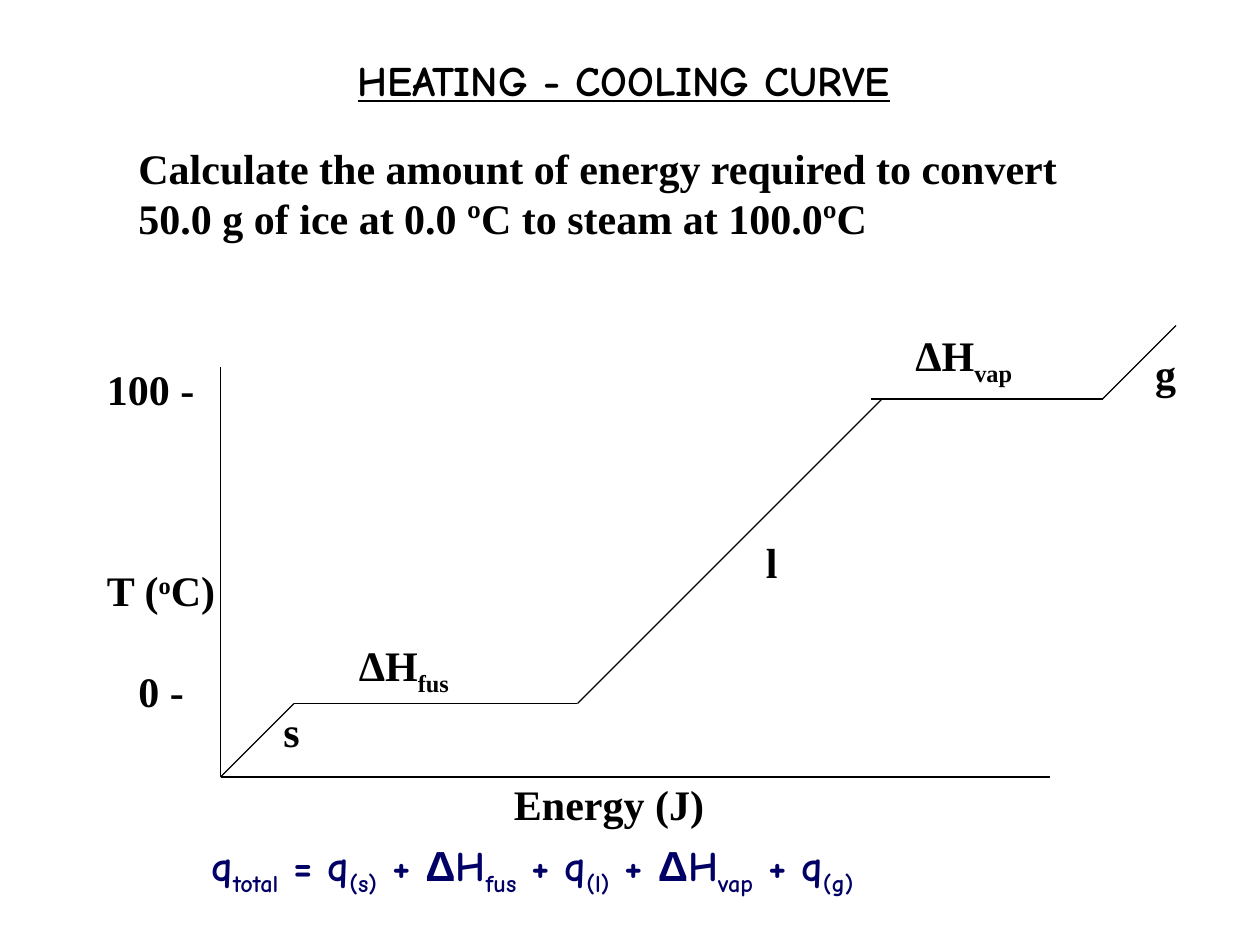
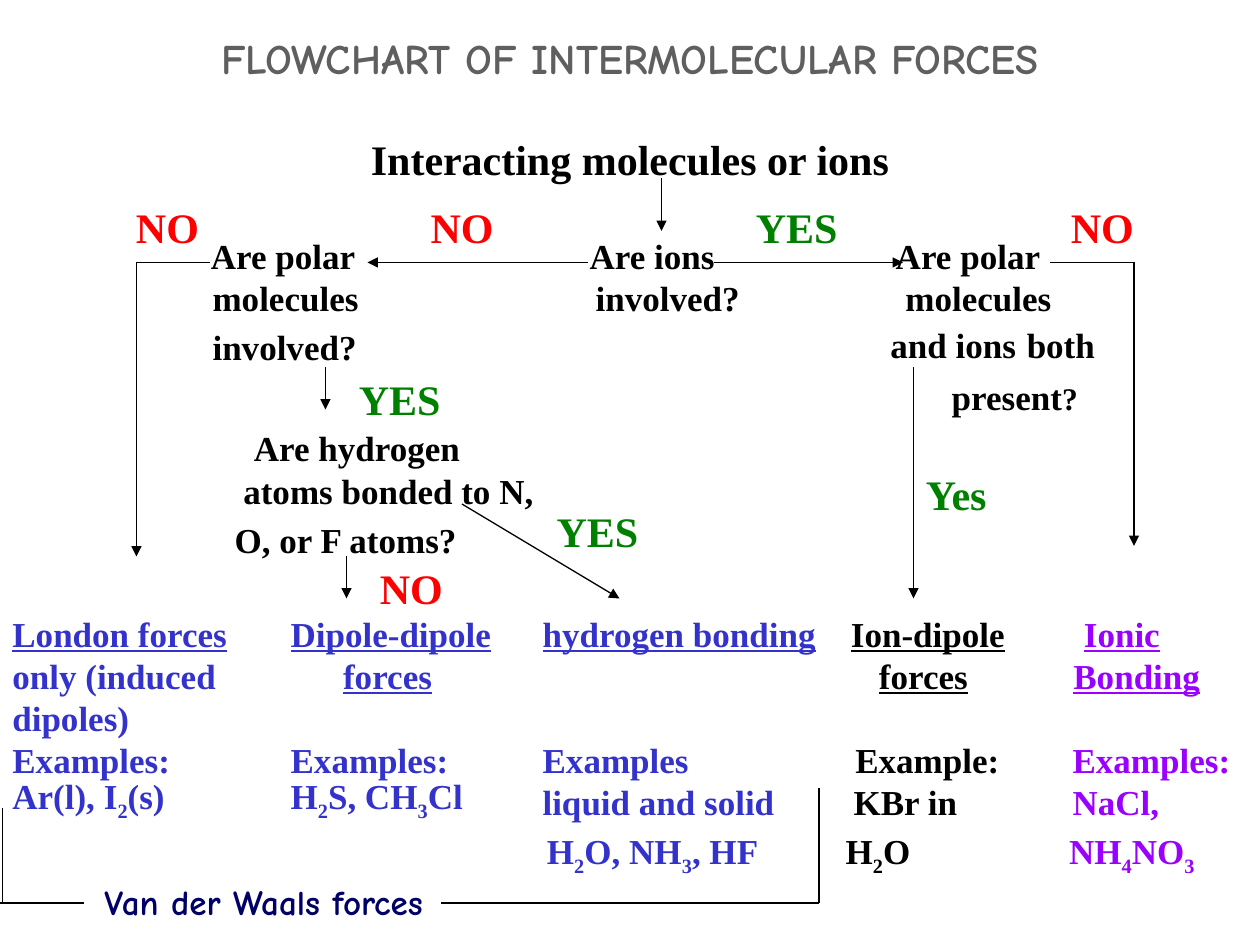
from dataclasses import dataclass

import pptx
import pptx.dml.color
import pptx.enum.shapes
import pptx.enum.text
import pptx.oxml
import pptx.oxml.ns
import pptx.util
from pptx.util import Pt

RGBColor = pptx.dml.color.RGBColor
BLACK = RGBColor(0x00, 0x00, 0x00)
GREY = RGBColor(0x5F, 0x5F, 0x5F)
NAVY = RGBColor(0x00, 0x00, 0x66)
BLUE = RGBColor(0x33, 0x33, 0xCC)
PURPLE = RGBColor(0x99, 0x00, 0xFF)
RED = RGBColor(0xFF, 0x00, 0x00)
GREEN = RGBColor(0x00, 0x80, 0x00)

SERIF = "Times New Roman"
COMIC = "Comic Neue"
SANS = "Arial"
LARGE, MEDIUM, SMALL = 24, 20, 18
LEADING = 1.2
SUBSCRIPT, SUPERSCRIPT = -25000, 30000
CENTER = pptx.enum.text.PP_ALIGN.CENTER
LEFT = pptx.enum.text.PP_ALIGN.LEFT


@dataclass(frozen=True)
class Run:
    """A piece of text that differs from the rest of its block."""
    text: str
    baseline: int = 0
    font: str | None = None
    size: float | None = None


@dataclass(frozen=True)
class Line:
    """One paragraph with its indent and the space above it, in points."""
    runs: tuple[Run, ...]
    indent: float = 0
    before: float = 0
    underline: bool = False


@dataclass(frozen=True)
class Block:
    """A text box, with its place and size in points."""
    left: float
    top: float
    width: float
    lines: tuple[Line, ...]
    color: RGBColor = BLACK
    size: float = LARGE
    font: str = SERIF
    align: pptx.enum.text.PP_ALIGN = LEFT


@dataclass(frozen=True)
class Stroke:
    """A straight line between two points, with or without an arrowhead."""
    start: tuple[float, float]
    end: tuple[float, float]
    arrow: bool = False


def sub(text: str) -> Run:
    """Return a subscript run."""
    return Run(text, SUBSCRIPT)


def line(*parts: str | Run, indent: float = 0, before: float = 0, underline: bool = False) -> Line:
    """Return a paragraph made of plain strings and special runs."""
    runs = tuple(Run(part) if isinstance(part, str) else part for part in parts)
    return Line(runs, indent, before, underline)


def label(left: float, top: float, *parts: str | Run, color: RGBColor = BLACK, width: float = 100) -> Block:
    """Return a large one-line block."""
    return Block(left, top, width, (line(*parts),), color)


def title(text: str, left: float, top: float, width: float, color: RGBColor, underline: bool = False) -> Block:
    """Return a centred slide title."""
    return Block(left, top, width, (line(text, underline=underline),), color, font=COMIC, align=CENTER)


def question(left: float, top: float, *lines: Line) -> Block:
    """Return a question of the flowchart."""
    return Block(left, top, 200, lines, size=MEDIUM)


def outcome(left: float, color: RGBColor, *lines: Line) -> Block:
    """Return a block of the bottom row of the flowchart."""
    return Block(left, 346.4, 175, lines, color, MEDIUM)


def draw_block(slide: pptx.slide.Slide, block: Block) -> None:
    """Draw a text box run by run."""
    pitch = LEADING * block.size
    height = 7.2 + sum(pitch + item.before for item in block.lines)
    shape = slide.shapes.add_textbox(Pt(block.left), Pt(block.top), Pt(block.width), Pt(height))
    frame = shape.text_frame
    frame.word_wrap = True
    for index, item in enumerate(block.lines):
        paragraph = frame.add_paragraph() if index else frame.paragraphs[0]
        paragraph.alignment = block.align
        paragraph.line_spacing = Pt(pitch)
        paragraph.space_before = Pt(item.before)
        paragraph._p.get_or_add_pPr().set("marL", str(Pt(item.indent)))
        for piece in item.runs:
            run = paragraph.add_run()
            run.text = piece.text
            run.font.name = piece.font or block.font
            run.font.size = Pt(piece.size or block.size)
            run.font.bold = True
            run.font.underline = item.underline
            run.font.color.rgb = block.color
            if piece.baseline:
                run.font._element.set("baseline", str(piece.baseline))


def draw_stroke(slide: pptx.slide.Slide, stroke: Stroke) -> None:
    """Draw a thin black connector without a shadow."""
    points = [Pt(value) for value in (*stroke.start, *stroke.end)]
    connector = slide.shapes.add_connector(pptx.enum.shapes.MSO_CONNECTOR.STRAIGHT, *points)
    connector.line.color.rgb = BLACK
    connector.line.width = Pt(0.75)
    if stroke.arrow:
        head = pptx.oxml.parse_xml(f'<a:tailEnd {pptx.oxml.ns.nsdecls("a")} type="triangle"/>')
        connector.line._get_or_add_ln().append(head)
    effects = pptx.oxml.parse_xml(f'<a:effectLst {pptx.oxml.ns.nsdecls("a")}/>')
    connector._element.spPr.append(effects)


def polyline(*points: tuple[float, float], arrow: bool = False) -> list[Stroke]:
    """Return strokes joining the points, with any arrowhead on the last."""
    pairs = list(zip(points, points[1:]))
    return [Stroke(a, b, arrow and b == points[-1]) for a, b in pairs]


DELTA = Run("Δ", font=SANS)

CURVE_STROKES = [
    *polyline((126, 210), (126, 444), (600, 444)),
    *polyline((126, 444), (168, 402), (330, 402), (504, 228)),
    *polyline((498, 228), (630, 228), (672, 186)),
]
CURVE_BLOCKS = [
    title("HEATING - COOLING CURVE", 64.8, 27.4, 583.2, BLACK, underline=True),
    Block(72, 77.8, 564, (
        line("Calculate the amount of energy required to convert"),
        line("50.0 g of ice at 0.0 ºC to steam at 100.0ºC"),
    )),
    label(54, 204, "100 -"),
    label(54, 319.2, "T (", Run("o", SUPERSCRIPT), "C)"),
    label(72, 376.8, "0 -"),
    label(154.8, 399.6, "s", width=30),
    label(198, 366, "ΔH", sub("fus")),
    label(430.6, 303.1, "l", width=30),
    label(516, 188.8, "ΔH", sub("vap")),
    label(653, 195.1, "g", width=30),
    label(286.6, 441.4, "Energy (J)", width=140),
    Block(113.8, 480.2, 480, (
        line("q", sub("total"), " = q", sub("(s)"), " + ", DELTA, "H", sub("fus"),
             " + q", sub("(l)"), " + ", DELTA, "H", sub("vap"), " + q", sub("(g)")),
    ), NAVY, font=COMIC),
]

FLOW_STROKES = [
    *polyline((336, 150), (210, 150), arrow=True),
    *polyline((378, 102), (378, 132), arrow=True),
    *polyline((408, 150), (516, 150), arrow=True),
    *polyline((120, 150), (78, 150), (78, 318), arrow=True),
    *polyline((600, 150), (648, 150), (648, 312), arrow=True),
    *polyline((186, 210), (186, 234), arrow=True),
    *polyline((522, 210), (522, 342), arrow=True),
    *polyline((198, 318), (198, 342), arrow=True),
    *polyline((264, 288), (354, 342), arrow=True),
    *polyline((252, 516), (468, 516), (468, 450)),
    *polyline((48, 516), (0, 516)),
    *polyline((1.4, 516), (1.4, 462)),
]
FLOW_BLOCKS = [
    title("FLOWCHART OF INTERMOLECULAR FORCES", 0, 15.1, 720, GREY),
    Block(0, 72.7, 720, (line("Interacting molecules or ions"),), align=CENTER),
    question(113.4, 130.3, line("Are polar"), line("molecules", indent=1),
             line("involved?", indent=1, before=4)),
    question(329.8, 130.3, line("Are ions"), line("involved?", indent=3.5)),
    question(501.8, 130.3, line("Are polar", indent=3), line("molecules", indent=8.5),
             line("and ions", Run(" ", size=LARGE), "both", before=4),
             line("present", Run("?", size=SMALL), indent=35, before=5)),
    question(127, 240, line("Are hydrogen", indent=11), line("atoms bonded to N,", indent=5, before=1),
             line("O, or F atoms?", before=4)),
    outcome(0, BLUE, line("London forces", underline=True), line("only (induced"), line("dipoles)"),
            line("Examples:"), line("Ar(l), I", sub("2"), "(s)")),
    outcome(159, BLUE, line("Dipole-dipole", underline=True), line("forces", indent=30, underline=True),
            line("Examples:", before=24), line("H", sub("2"), "S, CH", sub("3"), "Cl")),
    outcome(303, BLUE, line("hydrogen bonding", underline=True), line("Examples", before=48),
            line("liquid and solid"),
            line("H", sub("2"), "O, NH", sub("3"), ", HF", indent=2.5, before=7.5)),
    outcome(476.2, BLACK, line("Ion-dipole", indent=3, underline=True),
            line("forces", indent=19, underline=True), line("Example:", indent=5.5, before=24),
            line("KBr in", indent=4.5), line("H", sub("2"), "O", before=7.5)),
    outcome(603.8, PURPLE, line("Ionic", indent=8.5, underline=True),
            line("Bonding", indent=2.5, underline=True), line("Examples:", indent=2, before=24),
            line("NaCl,", indent=2), line("NH", sub("4"), "NO", sub("3"), before=7.5)),
    *(label(left, top, "NO", color=RED, width=60)
      for left, top in ((70.6, 111.6), (239, 111.6), (604.8, 111.6), (210, 318.2))),
    *(label(left, top, "YES", color=GREEN, width=70)
      for left, top in ((424.8, 111.6), (198, 210), (311, 285.1))),
    label(522, 264.2, "Yes", color=GREEN, width=60),
    Block(52.6, 499.7, 227.5, (line("Van der Waals forces"),), NAVY, MEDIUM, COMIC),
]


def main() -> None:
    """Build both slides and save the presentation."""
    presentation = pptx.Presentation()
    presentation.slide_width, presentation.slide_height = Pt(720), Pt(540)
    for strokes, blocks in ((CURVE_STROKES, CURVE_BLOCKS), (FLOW_STROKES, FLOW_BLOCKS)):
        slide = presentation.slides.add_slide(presentation.slide_layouts[6])
        for stroke in strokes:
            draw_stroke(slide, stroke)
        for block in blocks:
            draw_block(slide, block)
    presentation.save("out.pptx")


if __name__ == "__main__":
    main()
